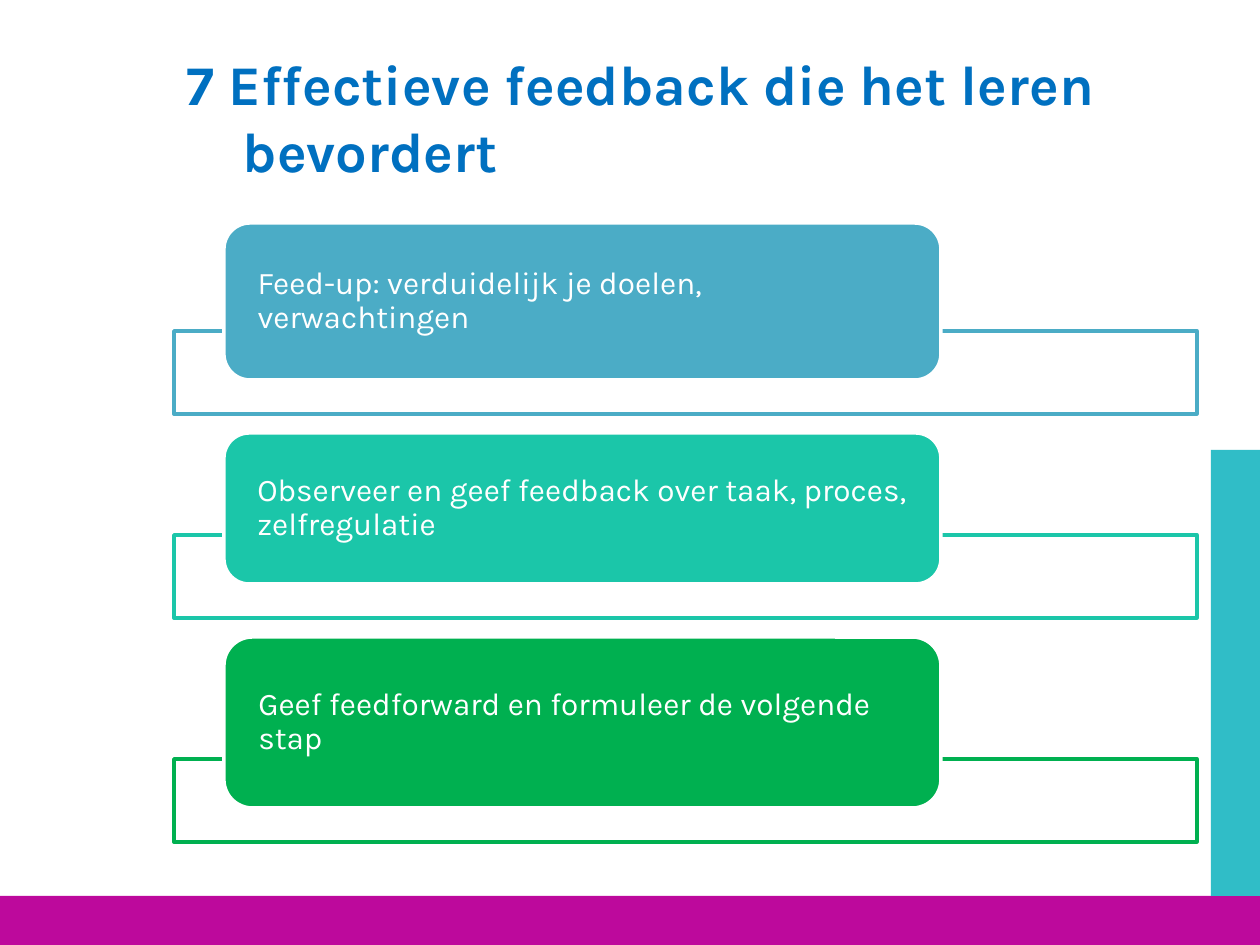
from pptx import Presentation
from pptx.dml.color import RGBColor
from pptx.enum.shapes import MSO_SHAPE
from pptx.enum.text import MSO_ANCHOR, PP_ALIGN
from pptx.util import Emu, Pt

PX = 914400 // 126
FONT = "Karla"
COLORS = {
    "title": "0070C0",
    "white": "FFFFFF",
    "magenta": "BD099C",
    "turquoise": "30BDC7",
    "blue": "4BACC6",
    "mint": "1BC6A9",
    "green": "00B050",
}

TITLE = "7 Effectieve feedback die het leren\vbevordert"
# text, colour, card height
STEPS = [
    ("Feed-up: verduidelijk je doelen, verwachtingen", "blue", 157),
    ("Observeer en geef feedback over taak, proces, zelfregulatie", "mint", 151),
    ("Geef feedforward en formuleer de volgende stap", "green", 171),
]
# left, top, width, height, colour
BARS = [(0, 896, 1260, 49, "magenta"), (1211, 450, 49, 446, "turquoise")]

LEFT, WIDTH = 174, 1023
TITLE_TOP, TITLE_HEIGHT, TITLE_HANG = 38, 157, 56
CARD_LEFT, CARD_WIDTH, FIRST_CARD_TOP = 224, 717, 223
FRAME_HEIGHT, OVERLAP, GAP = 83, 49, 19
CARD_INSET = 26


def px(length):
    return Emu(length * PX)


def rgb(name):
    return RGBColor.from_string(COLORS[name])


def add_box(slide, preset, left, top, width, height, fill, line=None):
    box = slide.shapes.add_shape(preset, px(left), px(top), px(width), px(height))
    box.shadow.inherit = False
    box.fill.solid()
    box.fill.fore_color.rgb = rgb(fill)
    if line:
        box.line.color.rgb = rgb(line)
        box.line.width = Pt(2)
    else:
        box.line.fill.background()
    return box


def style_font(font, size, color, bold=False):
    font.name, font.size, font.bold = FONT, Pt(size), bold
    font.color.rgb = rgb(color)


def add_title(slide):
    title = slide.shapes.title
    title.left, title.top = px(LEFT), px(TITLE_TOP)
    title.width, title.height = px(WIDTH), px(TITLE_HEIGHT)
    frame = title.text_frame
    frame.text = TITLE
    frame.word_wrap = True
    frame.vertical_anchor = MSO_ANCHOR.MIDDLE
    paragraph = frame.paragraphs[0]
    paragraph.alignment = PP_ALIGN.LEFT
    properties = paragraph._p.get_or_add_pPr()
    properties.set("marL", str(px(TITLE_HANG)))
    properties.set("indent", str(-px(TITLE_HANG)))
    for run in paragraph.runs:
        style_font(run.font, 32, "title", bold=True)


def add_card(slide, text, color, top, height):
    card = add_box(slide, MSO_SHAPE.ROUNDED_RECTANGLE, CARD_LEFT, top,
                   CARD_WIDTH, height, color, "white")
    frame = card.text_frame
    frame.text = text
    frame.word_wrap = True
    frame.vertical_anchor = MSO_ANCHOR.MIDDLE
    frame.margin_left = frame.margin_right = px(CARD_INSET)
    frame.margin_top = frame.margin_bottom = 0
    paragraph = frame.paragraphs[0]
    paragraph.alignment = PP_ALIGN.LEFT
    paragraph.line_spacing = 0.9
    style_font(paragraph.runs[0].font, 18, "white")


def main():
    deck = Presentation()
    deck.slide_width, deck.slide_height = px(1260), px(945)
    slide = deck.slides.add_slide(deck.slide_layouts[5])

    for left, top, width, height, color in BARS:
        add_box(slide, MSO_SHAPE.RECTANGLE, left, top, width, height, color)
    add_title(slide)

    card_top = FIRST_CARD_TOP
    for text, color, card_height in STEPS:
        frame_top = card_top + card_height - OVERLAP
        add_box(slide, MSO_SHAPE.RECTANGLE, LEFT, frame_top, WIDTH,
                FRAME_HEIGHT, "white", color)
        add_card(slide, text, color, card_top, card_height)
        card_top = frame_top + FRAME_HEIGHT + GAP

    deck.save("out.pptx")


if __name__ == "__main__":
    main()
